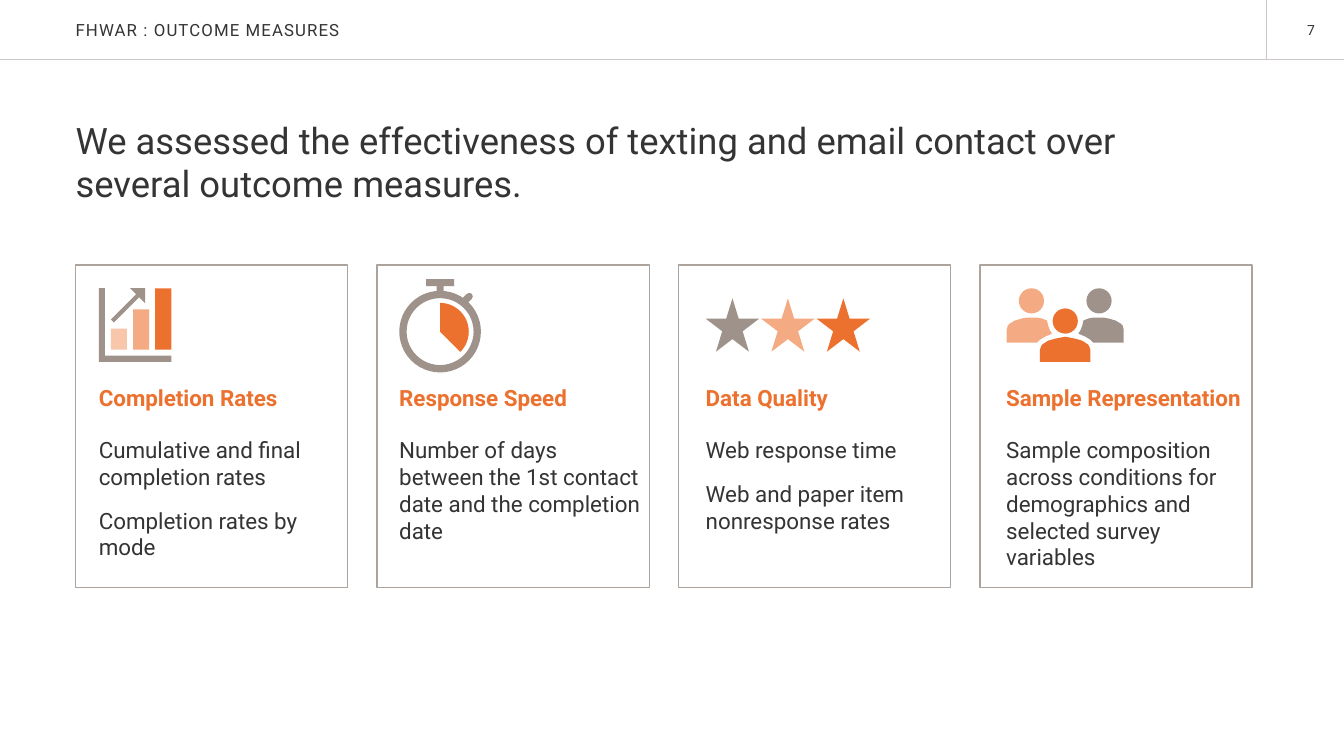
from dataclasses import dataclass

from lxml import etree
from pptx import Presentation
from pptx.dml.color import RGBColor
from pptx.enum.shapes import MSO_CONNECTOR, MSO_SHAPE
from pptx.enum.text import MSO_ANCHOR, PP_ALIGN
from pptx.oxml.ns import qn
from pptx.util import Inches, Pt

RECTANGLE, OVAL = MSO_SHAPE.RECTANGLE, MSO_SHAPE.OVAL
DONUT, PIE, STAR = MSO_SHAPE.DONUT, MSO_SHAPE.PIE, MSO_SHAPE.STAR_5_POINT
STRAIGHT = MSO_CONNECTOR.STRAIGHT
LEFT, RIGHT = PP_ALIGN.LEFT, PP_ALIGN.RIGHT
TOP, MIDDLE = MSO_ANCHOR.TOP, MSO_ANCHOR.MIDDLE


@dataclass(frozen=True)
class Theme:
    font: str = "Roboto"
    ink: str = "353435"
    orange: str = "EC712E"
    peach: str = "F4AA82"
    pale: str = "F7C6AB"
    gray: str = "9E928B"
    border: str = "ADA39D"
    rule: str = "CEC8C4"
    number_size: int = 10
    title_size: int = 12
    card_size: int = 16
    headline_size: int = 26


def write(para, text, theme, size, color, bold=False, tracking=0):
    span = para.add_run()
    span.text = text
    span.font.name = theme.font
    span.font.size = Pt(size)
    span.font.bold = bold
    span.font.color.rgb = RGBColor.from_string(color)
    if tracking:
        span.font._element.set("spc", str(round(tracking * 100)))


class SlideBuilder:
    def __init__(self, page, theme):
        self.page = page
        self.theme = theme

    def text_box(self, left, top, width, height, align=LEFT, anchor=TOP, inset=0):
        box = self.page.shapes.add_textbox(
            Inches(left), Inches(top), Inches(width), Inches(height))
        frame = box.text_frame
        frame.word_wrap = True
        frame.vertical_anchor = anchor
        frame.margin_left = frame.margin_right = Inches(inset)
        frame.margin_top = frame.margin_bottom = Inches(inset / 2)
        frame.paragraphs[0].alignment = align
        return frame

    def label(self, text, place, size, tracking=0, **layout):
        frame = self.text_box(*place, **layout)
        write(frame.paragraphs[0], text, self.theme, size, self.theme.ink,
              tracking=tracking)

    def line(self, start, end, color, weight, round_cap=False):
        rule = self.page.shapes.add_connector(
            STRAIGHT, *(Inches(value) for value in (*start, *end)))
        rule.line.color.rgb = RGBColor.from_string(color)
        rule.line.width = Pt(weight)
        if round_cap:
            rule.line._get_or_add_ln().set("cap", "rnd")
        etree.SubElement(rule._element.spPr, qn("a:effectLst"))

    def shape(self, kind, left, top, width, height, fill, adjustments=()):
        shape = self.page.shapes.add_shape(
            kind, Inches(left), Inches(top), Inches(width), Inches(height))
        for index, value in enumerate(adjustments):
            shape.adjustments[index] = value
        self.paint(shape, fill)

    def polygon(self, points, fill):
        corners = [(Inches(x), Inches(y)) for x, y in points]
        builder = self.page.shapes.build_freeform(*corners[0])
        builder.add_line_segments(corners[1:], close=True)
        self.paint(builder.convert_to_shape(), fill)

    def paint(self, shape, fill):
        shape.shadow.inherit = False
        shape.fill.solid()
        shape.fill.fore_color.rgb = RGBColor.from_string(fill)
        shape.line.fill.background()

    def card(self, left, text_left, heading, measures):
        theme = self.theme
        frame_shape = self.page.shapes.add_shape(
            RECTANGLE, Inches(left), Inches(2.63), Inches(2.7), Inches(3.2))
        frame_shape.shadow.inherit = False
        frame_shape.fill.background()
        frame_shape.line.color.rgb = RGBColor.from_string(theme.border)
        frame_shape.line.width = Pt(1)
        frame = self.text_box(text_left, 3.81, 2.4, 1.53)
        para = frame.paragraphs[0]
        para.space_after = Pt(12)
        write(para, heading, theme, theme.card_size, theme.orange, bold=True)
        for measure in measures:
            para = frame.add_paragraph()
            para.space_before = para.space_after = Pt(6)
            write(para, measure, theme, theme.card_size, theme.ink)

    def growth_icon(self, left):
        theme = self.theme
        axes = [(0, 0), (0.06, 0), (0.06, 0.67), (0.72, 0.67), (0.72, 0.73), (0, 0.73)]
        arrow = [(0.46, 0.15), (0.46, 0), (0.31, 0), (0.37, 0.06),
                 (0.12, 0.31), (0.15, 0.34), (0.4, 0.09)]
        for outline in (axes, arrow):
            self.polygon([(left + x, 2.86 + y) for x, y in outline], theme.gray)
        bars = ((0.21, theme.pale), (0.4, theme.peach), (0.61, theme.orange))
        for index, (height, color) in enumerate(bars):
            self.shape(RECTANGLE, left + 0.12 + 0.22 * index, 3.47 - height,
                       0.16, height, color)

    def stopwatch_icon(self, left):
        theme = self.theme
        center, middle = left + 0.405, 3.29
        self.shape(DONUT, left, 2.885, 0.81, 0.81, theme.gray, [0.09])
        self.shape(RECTANGLE, center - 0.14, 2.77, 0.28, 0.07, theme.gray)
        self.shape(RECTANGLE, center - 0.035, 2.83, 0.07, 0.08, theme.gray)
        self.line((center + 0.23, 3), (center + 0.29, 2.94), theme.gray, 5,
                  round_cap=True)
        self.shape(PIE, center - 0.285, middle - 0.285, 0.57, 0.57,
                   theme.orange, [162, 27])

    def stars_icon(self, left):
        theme = self.theme
        for index, color in enumerate((theme.gray, theme.peach, theme.orange)):
            self.shape(STAR, left + 0.55 * index, 2.96, 0.53, 0.53, color)

    def people_icon(self, left):
        theme = self.theme
        center = left + 0.585
        side = [(0.57, 3.23), (0.55, 3.21), (0.5, 3.18), (0.43, 3.16), (0.38, 3.15),
                (0.33, 3.15), (0.28, 3.15), (0.23, 3.16), (0.18, 3.18), (0.17, 3.23),
                (0.15, 3.28), (0.13, 3.31), (0.2, 3.34), (0.25, 3.37), (0.28, 3.4),
                (0.58, 3.4), (0.58, 3.27)]
        half = [(0.25, 3.59), (0.25, 3.47), (0.24, 3.44), (0.23, 3.42), (0.17, 3.38),
                (0.1, 3.36), (0.05, 3.35), (0, 3.34)]
        front = half + [(-x, y) for x, y in reversed(half[:-1])]
        people = ((side, -1, -0.335, 2.86, theme.peach),
                  (side, 1, 0.335, 2.86, theme.gray),
                  (front, 1, 0, 3.06, theme.orange))
        for outline, direction, offset, top, color in people:
            self.polygon([(center + direction * x, y) for x, y in outline], color)
            self.shape(OVAL, center + offset - 0.125, top, 0.25, 0.25, color)


def main():
    deck = Presentation()
    deck.slide_width, deck.slide_height = Inches(13.33), Inches(7.5)
    theme = Theme()
    slide = SlideBuilder(deck.slides.add_slide(deck.slide_layouts[6]), theme)

    slide.line((0, 0.59), (13.33, 0.59), theme.rule, 0.65)
    slide.line((12.56, 0), (12.56, 0.59), theme.rule, 0.65)
    slide.label("7", (12.64, 0.16, 0.5, 0.27), theme.number_size,
                align=RIGHT, inset=0.1)
    slide.label("FHWAR : OUTCOME MEASURES", (0.75, 0, 8.19, 0.6),
                theme.title_size, tracking=0.8, anchor=MIDDLE)
    slide.label("We assessed the effectiveness of texting and email contact over "
                "several outcome measures.", (0.75, 1.17, 10.67, 1),
                theme.headline_size)

    cards = (
        (0.98, "Completion Rates", slide.growth_icon,
         ["Cumulative and final completion rates", "Completion rates by mode"]),
        (3.96, "Response Speed", slide.stopwatch_icon,
         ["Number of days between the 1st contact date and the completion date"]),
        (7, "Data Quality", slide.stars_icon,
         ["Web response time", "Web and paper item nonresponse rates"]),
        (9.98, "Sample Representation", slide.people_icon,
         ["Sample composition across conditions for demographics and selected "
          "survey variables"]),
    )
    for index, (text_left, heading, draw_icon, measures) in enumerate(cards):
        slide.card(0.75 + 2.99 * index, text_left, heading, measures)
        draw_icon(text_left)

    deck.save("out.pptx")


if __name__ == "__main__":
    main()
